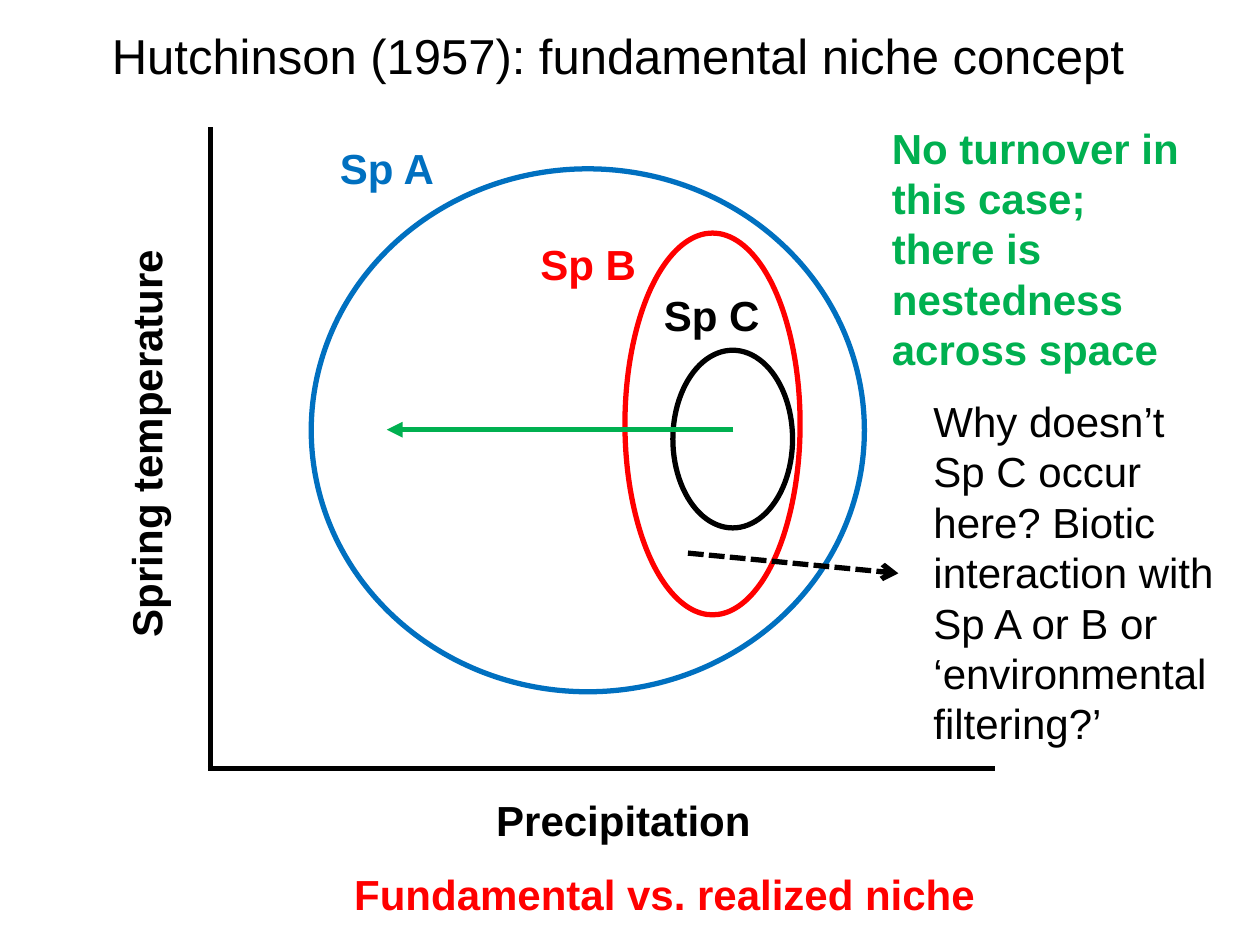
from lxml.etree import SubElement
from pptx import Presentation
from pptx.dml.color import RGBColor
from pptx.enum.dml import MSO_LINE
from pptx.enum.shapes import MSO_CONNECTOR, MSO_SHAPE
from pptx.enum.text import MSO_AUTO_SIZE, PP_ALIGN
from pptx.oxml.ns import qn
from pptx.util import Inches, Pt

BLACK = RGBColor(0x00, 0x00, 0x00)
RED = RGBColor(0xFF, 0x00, 0x00)
BLUE = RGBColor(0x00, 0x70, 0xC0)
GREEN = RGBColor(0x00, 0xB0, 0x50)

COLS, ROWS = 100, 75  # grid laid over the slide


class NicheSlide:
    """Holds the style and the slide; positions are grid columns and rows."""

    font, size, weight = "Arial", 24, 3

    def __init__(self, prs):
        self.s = prs.slides.add_slide(prs.slide_layouts[6])
        self.col = prs.slide_width / COLS
        self.row = prs.slide_height / ROWS

    def grid(self, col, row):
        return int(col * self.col), int(row * self.row)

    def text(self, at, size, text, color=BLACK, bold=True, pt=None,
             wrap=False, align=PP_ALIGN.LEFT, rotation=0):
        sp = self.s.shapes.add_textbox(*self.grid(*at), *self.grid(*size))
        sp.rotation = rotation
        tf = sp.text_frame
        tf.word_wrap = wrap
        tf.auto_size = MSO_AUTO_SIZE.SHAPE_TO_FIT_TEXT
        p = tf.paragraphs[0]
        p.alignment = align
        r = p.add_run()
        r.text = text
        r.font.name = self.font
        r.font.size = Pt(pt or self.size)
        r.font.bold = bold
        r.font.color.rgb = color

    def ellipse(self, at, size, color):
        sp = self.s.shapes.add_shape(
            MSO_SHAPE.OVAL, *self.grid(*at), *self.grid(*size))
        sp.shadow.inherit = False
        sp.fill.background()
        sp.line.color.rgb = color
        sp.line.width = Pt(self.weight)

    def line(self, start, end, color=BLACK, arrow=None, dash=None):
        sp = self.s.shapes.add_connector(
            MSO_CONNECTOR.STRAIGHT, *self.grid(*start), *self.grid(*end))
        sp.line.color.rgb = color
        sp.line.width = Pt(self.weight)
        if dash:
            sp.line.dash_style = dash
        if arrow:
            SubElement(sp.line._get_or_add_ln(), qn("a:tailEnd"), type=arrow)
        SubElement(sp._element.spPr, qn("a:effectLst"))


def main():
    prs = Presentation()
    prs.slide_width, prs.slide_height = Inches(10), Inches(7.5)
    s = NicheSlide(prs)

    # Axes and their titles
    s.line((16.7, 10.1), (16.7, 61))
    s.line((16.5, 61), (79, 61))
    s.text((38.4, 62.6), (22.4, 5), "Precipitation")
    s.text((-5, 32.5), (33.1, 5), "Spring temperature", rotation=270)

    # Niches of species B and A, slide title, niche of species C
    s.ellipse((49.6, 18.5), (13.9, 30.3), RED)
    s.ellipse((24.7, 13.4), (43.9, 41.5), BLUE)
    s.text((7.9, 1.5), (83.4, 5.7),
           "Hutchinson (1957): fundamental niche concept", bold=False, pt=28)
    s.ellipse((53.4, 27.8), (9.5, 14.1), BLACK)

    # Nestedness arrow and comment
    s.line((58.2, 34.1), (30.7, 34.1), GREEN, arrow="triangle")
    s.text((69.8, 9.2), (26.2, 21.2),
           "No turnover in this case; there is nestedness across space",
           GREEN, wrap=True)

    # Species labels
    for name, at, color in (("Sp A", (26, 10.8), BLUE),
                            ("Sp B", (41.9, 18.4), RED),
                            ("Sp C", (51.7, 22.5), BLACK)):
        s.text(at, (9.7, 5), name, color)

    # Question about the space outside niche C
    s.line((54.6, 43.9), (71.3, 45.5), arrow="arrow", dash=MSO_LINE.SQUARE_DOT)
    s.text((73.1, 30.9), (24.5, 29.3),
           "Why doesn’t Sp C occur here? Biotic interaction with Sp A or B "
           "or ‘environmental filtering?’", bold=False, wrap=True)

    # Conclusion
    s.text((9, 68.4), (87.5, 5), "Fundamental vs. realized niche", RED,
           wrap=True, align=PP_ALIGN.CENTER)

    prs.save("out.pptx")


if __name__ == "__main__":
    main()
